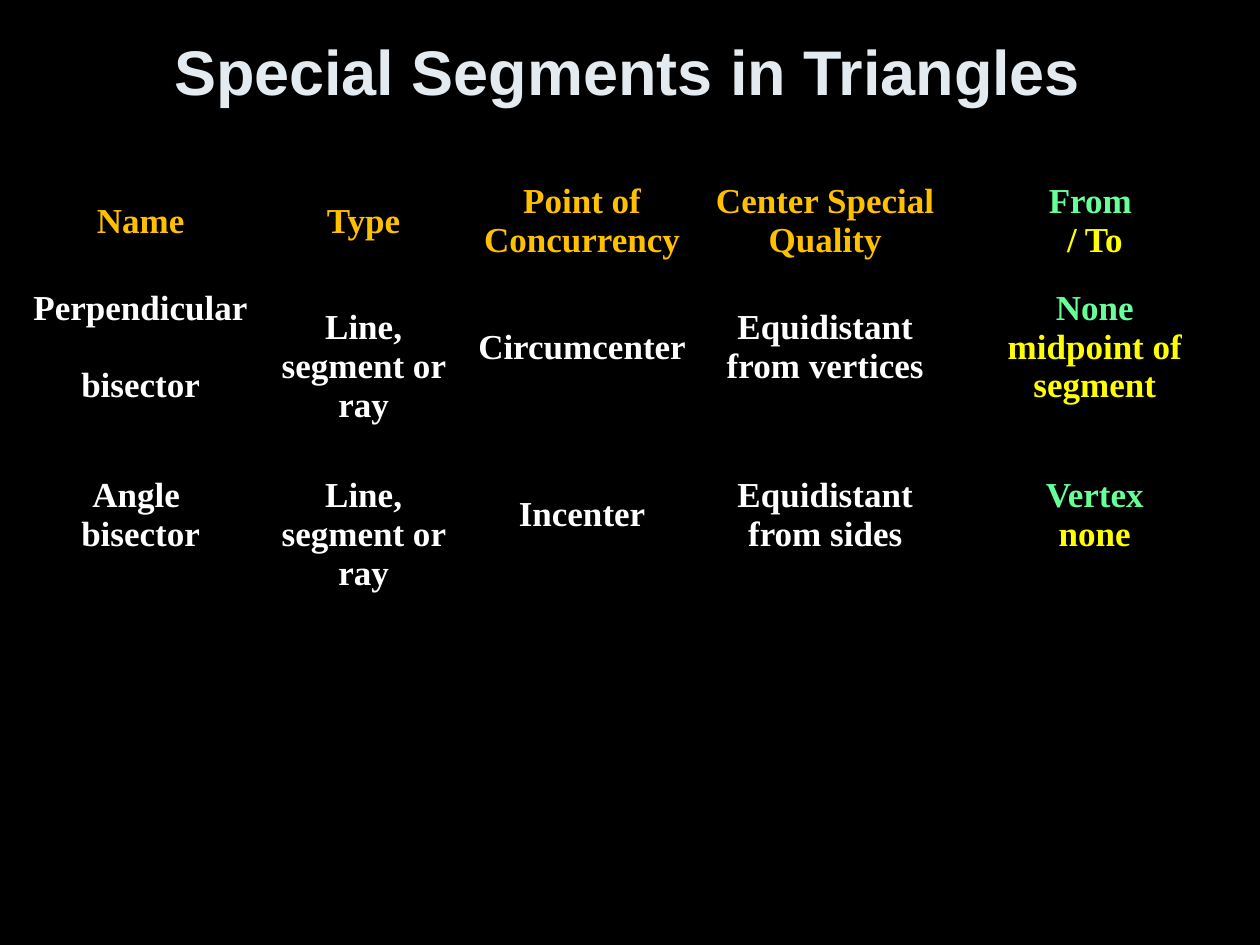
"""Build a slide with a table of special segments in triangles."""
import lxml.etree
import pptx
import pptx.dml.color
import pptx.enum.text
import pptx.oxml.ns
import pptx.util

Cm = pptx.util.Cm
Pt = pptx.util.Pt
GOLD, WHITE, GREEN, YELLOW = "FFC000", "FFFFFF", "66FF99", "FFFF00"


def rgb(value):
    return pptx.dml.color.RGBColor.from_string(value)


def add_run(paragraph, text, font_name, size, color):
    run = paragraph.add_run()
    run.text = text
    run.font.name = font_name
    run.font.size = Pt(size)
    run.font.bold = True
    run.font.color.rgb = rgb(color)


presentation = pptx.Presentation()
presentation.slide_width = Cm(25.4)
presentation.slide_height = Cm(19.05)
slide = presentation.slides.add_slide(presentation.slide_layouts[6])
slide.background.fill.solid()
slide.background.fill.fore_color.rgb = rgb("000000")

title = slide.shapes.add_textbox(Cm(1.22), Cm(0.1), Cm(22.86), Cm(2.64)).text_frame
title.word_wrap = True
title.vertical_anchor = pptx.enum.text.MSO_ANCHOR.MIDDLE
title.paragraphs[0].alignment = pptx.enum.text.PP_ALIGN.CENTER
add_run(title.paragraphs[0], "Special Segments in Triangles", "Arial", 36, "E3EBF1")

column_widths = [4.75, 4.24, 4.57, 5.23, 5.64]
row_heights = [1.35, 1.7, 3.38, 3.38, 1.35, 1.35]
segments = slide.shapes.add_table(
    len(row_heights), len(column_widths), Cm(0.46), Cm(2.26),
    Cm(sum(column_widths)), Cm(sum(row_heights))).table
segments.first_row = False
segments.horz_banding = False
for column, width in zip(segments.columns, column_widths):
    column.width = Cm(width)
for row, height in zip(segments.rows, row_heights):
    row.height = Cm(height)

for cell in segments.iter_cells():
    properties = cell._tc.get_or_add_tcPr()
    for side in ("a:lnL", "a:lnR", "a:lnT", "a:lnB"):
        border = lxml.etree.SubElement(properties, pptx.oxml.ns.qn(side), w=str(Pt(1)))
        border_fill = lxml.etree.SubElement(border, pptx.oxml.ns.qn("a:solidFill"))
        lxml.etree.SubElement(border_fill, pptx.oxml.ns.qn("a:srgbClr"), val="000000")
    cell.fill.background()
segments.cell(0, 0).merge(segments.cell(0, len(column_widths) - 1))

segment_type = ["Line, segment or ray"]
contents = [
    (GOLD, [["Name"], ["Type"], ["Point of Concurrency"],
            ["Center Special", "Quality"], ["From ", "/ To"]]),
    (WHITE, [["Perpendicular", "bisector"], segment_type, ["Circumcenter"],
             ["Equidistant", "from vertices"], ["None", "midpoint of segment"]]),
    (WHITE, [["Angle ", "bisector"], segment_type, ["Incenter"],
             ["Equidistant", "from sides"], ["Vertex", "none"]]),
]
for row_index, (row_color, entries) in enumerate(contents, start=1):
    for column_index, lines in enumerate(entries):
        cell = segments.cell(row_index, column_index)
        cell.vertical_anchor = pptx.enum.text.MSO_ANCHOR.MIDDLE
        cell.margin_left = cell.margin_right = Cm(0.18)
        cell.margin_top = Cm(0.78 if lines is segment_type else 0)
        cell.margin_bottom = 0
        from_to = column_index == len(column_widths) - 1
        colors = [GREEN, YELLOW] if from_to else [row_color] * 2
        paragraph = cell.text_frame.paragraphs[0]
        paragraph.alignment = pptx.enum.text.PP_ALIGN.CENTER
        for line_index, (line, color) in enumerate(zip(lines, colors)):
            if line_index and lines[0] == "Perpendicular":
                paragraph = cell.text_frame.add_paragraph()
                paragraph.alignment = pptx.enum.text.PP_ALIGN.CENTER
                paragraph.space_before = Pt(22)
            elif line_index:
                paragraph.add_line_break()
            add_run(paragraph, line, "Times New Roman", 20, color)

presentation.save("out.pptx")
